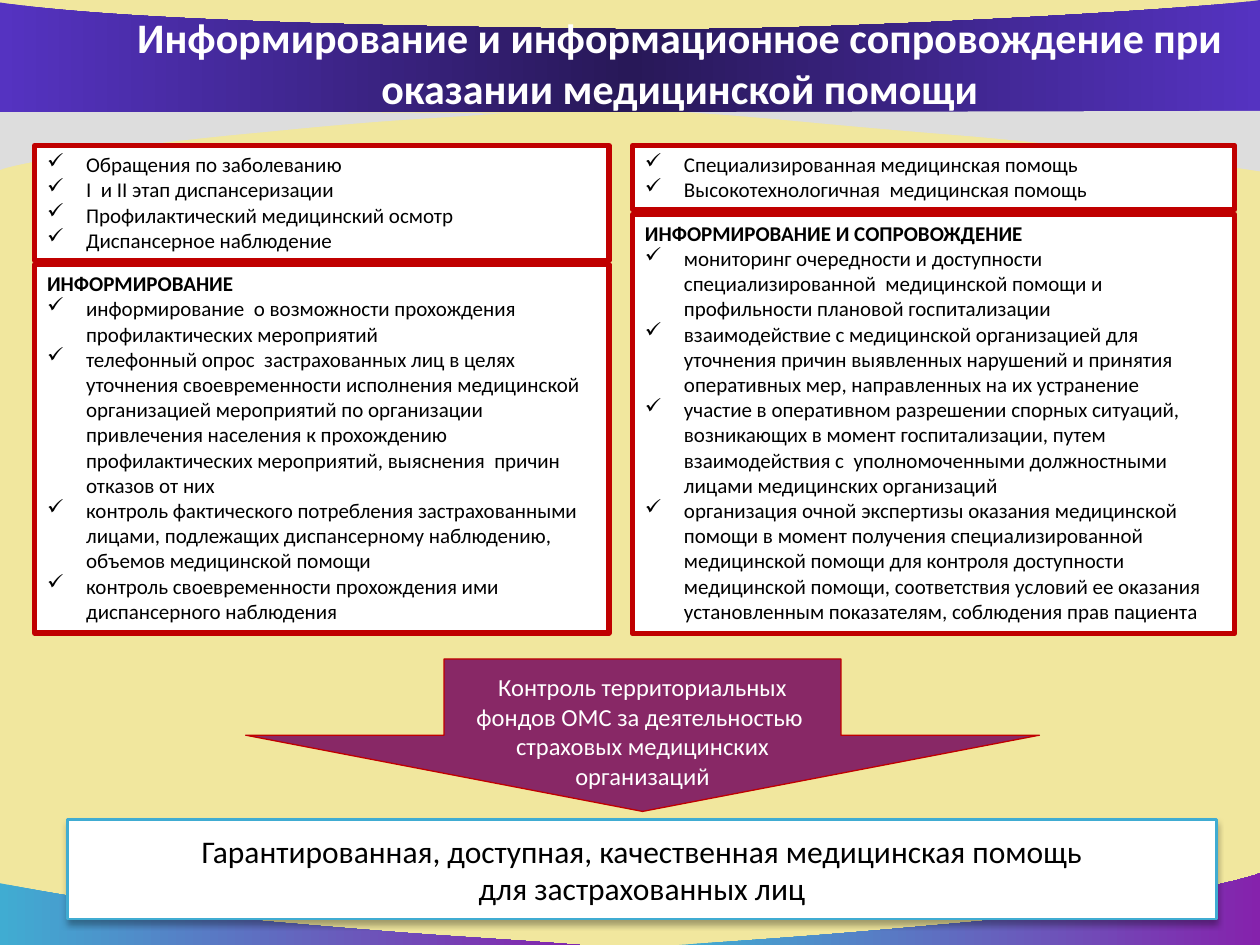
from dataclasses import dataclass
from lxml.etree import SubElement
from pptx import Presentation
from pptx.dml.color import RGBColor as Rgb
from pptx.enum.shapes import MSO_SHAPE as Preset
from pptx.enum.text import MSO_ANCHOR as Anchor, PP_ALIGN as Align
from pptx.oxml.ns import qn
from pptx.util import Inches, Pt

COLUMNS, ROWS = 100, 75
WIDTH, HEIGHT = Inches(10), Inches(7.5)


@dataclass(frozen=True)
class Theme:
    font: str = "Calibri"
    title: int = 24
    body: int = 12
    control: int = 14
    outcome: int = 18
    sand: str = "F1E79E"
    white: str = "FFFFFF"
    black: str = "000000"
    gray: str = "DDDDDD"
    red: str = "C00000"
    plum: str = "882866"
    sky: str = "40ACD2"
    corner: tuple = ((0, "40ACD2"), (100, "8522AC"))
    banner: tuple = ((0, "5533C1"), (50, "281858"), (100, "5533C1"))


@dataclass(frozen=True)
class Box:
    left: float
    top: float
    width: float
    height: float

    def emu(self):
        return (col(self.left), row(self.top), col(self.width), row(self.height))

    def split(self, first, gap):
        rest = self.height - first - gap
        return (Box(self.left, self.top, self.width, first),
                Box(self.left, self.top + first + gap, self.width, rest))


THEME = Theme()


def col(count):
    return int(WIDTH * count / COLUMNS)


def row(count):
    return int(HEIGHT * count / ROWS)


def node(parent, tag, **attributes):
    return SubElement(parent, qn(tag), attributes)


def fill_gradient(shape, stops):
    shape.fill.gradient()
    shape.fill.gradient_angle = 0
    stop_list = shape.fill._fill._gradFill.find(qn("a:gsLst"))
    for stop in list(stop_list):
        stop_list.remove(stop)
    for position, color in stops:
        stop = node(stop_list, "a:gs", pos=str(position * 1000))
        node(stop, "a:srgbClr", val=color)


def paint(shape, fill, line=None, weight=0):
    shape.shadow.inherit = False
    if isinstance(fill, tuple):
        fill_gradient(shape, fill)
    else:
        shape.fill.solid()
        shape.fill.fore_color.rgb = Rgb.from_string(fill)
    if line:
        shape.line.color.rgb = Rgb.from_string(line)
        shape.line.width = Pt(weight)
    else:
        shape.line.fill.background()


def style(paragraph, size, color, align=Align.LEFT, bold=False):
    paragraph.alignment = align
    for part in (paragraph, *paragraph.runs):
        font = part.font
        font.name, font.size, font.bold = THEME.font, Pt(size), bold
        font.color.rgb = Rgb.from_string(color)


def add_check(paragraph):
    properties = paragraph._p.get_or_add_pPr()
    indent = Inches(0.31)
    properties.set("marL", str(indent))
    properties.set("indent", str(-indent))
    node(properties, "a:buChar", char="✓")


def add_wave(slide, start, curves, corners, fill):
    anchors = [start] + [curve[-1] for curve in curves] + corners
    outline = [(col(x), row(y)) for x, y in anchors]
    builder = slide.shapes.build_freeform(*outline[0], scale=1.0)
    builder.add_line_segments(outline[1:], close=True)
    wave = builder.convert_to_shape()
    segments = list(wave._element.iter(qn("a:lnTo")))
    for segment, curve in zip(segments, curves):
        segment.tag
        bend = node(segment.getparent(), "a:cubicBezTo")
        for x, y in curve:
            node(bend, "a:pt", x=str(col(x) - wave.left), y=str(row(y) - wave.top))
        segment.getparent().replace(segment, bend)
    paint(wave, fill)


def add_backdrop(slide):
    slide.background.fill.solid()
    slide.background.fill.fore_color.rgb = Rgb.from_string(THEME.sand)
    add_wave(slide, (46, 75), [((38.4, 74.4), (35.8, 74.4), (23.2, 73.3)),
                               ((10.6, 72.3), (0.1, 70.1), (0, 70.1))], [(0, 75)], THEME.corner)
    add_wave(slide, (53.9, 75), [((61.4, 74.5), (64.6, 74.3), (76.9, 73.2)),
                                 ((89.2, 72.1), (99, 69.8), (100, 69.3))], [(100, 75)], THEME.corner)
    add_wave(slide, (39.8, 9), [((33.1, 9.5), (31.8, 9.4), (20.8, 10.5)),
                                ((9.7, 11.5), (0.9, 13), (0, 13.5))], [(0, 8.7)], THEME.gray)
    add_wave(slide, (100, 0), [((96.4, 0.6), (65.3, 2.6), (48.7, 2.3)),
                               ((32.1, 2.1), (10.1, 1.7), (0, 0.2))], [(0, 8.9), (100, 8.9)], THEME.banner)
    add_wave(slide, (54.4, 8.9), [((62, 9.4), (64.2, 9.8), (76.8, 10.8)),
                                  ((89.4, 11.9), (99.9, 13.6), (100, 13.6))], [(100, 8.8)], THEME.gray)


def add_title(slide, box, wording):
    title = slide.shapes.title
    title.left, title.top, title.width, title.height = box.emu()
    frame = title.text_frame
    frame.text = wording
    frame.word_wrap = True
    frame.vertical_anchor = Anchor.TOP
    style(frame.paragraphs[0], THEME.title, THEME.white, Align.CENTER, True)
    slide.shapes._spTree.append(title._element)


def add_panel(slide, box, items, heading=None):
    panel = slide.shapes.add_shape(Preset.RECTANGLE, *box.emu())
    paint(panel, THEME.white, THEME.red, 3)
    frame = panel.text_frame
    frame.word_wrap = True
    frame.vertical_anchor = Anchor.TOP
    frame.text = "\n".join(([heading] if heading else []) + items)
    for index, paragraph in enumerate(frame.paragraphs):
        is_heading = bool(heading) and index == 0
        if not is_heading:
            add_check(paragraph)
        style(paragraph, THEME.body, THEME.black, bold=is_heading)


def add_care_column(slide, box, split_at, care, heading, duties):
    care_box, duties_box = box.split(split_at, 0.35)
    add_panel(slide, care_box, care)
    add_panel(slide, duties_box, duties, heading)


def add_centered(slide, preset, box, lines, size, colors, weight):
    fill, line, ink = colors
    shape = slide.shapes.add_shape(preset, *box.emu())
    paint(shape, fill, line, weight)
    frame = shape.text_frame
    frame.word_wrap = True
    frame.vertical_anchor = Anchor.MIDDLE
    frame.text = "\n".join(lines)
    for paragraph in frame.paragraphs:
        style(paragraph, size, ink, Align.CENTER)
    return shape


def add_control_arrow(slide, box, lines):
    arrow = add_centered(slide, Preset.DOWN_ARROW, box, lines, THEME.control,
                         (THEME.plum, THEME.red, THEME.white), 0.75)
    arrow.text_frame.margin_top = row(2.9)


def add_outcome(slide, box, lines):
    outcome = add_centered(slide, Preset.RECTANGLE, box, lines, THEME.outcome,
                           (THEME.white, THEME.sky, THEME.black), 1.5)
    effects = outcome._element.spPr.find(qn("a:effectLst"))
    shadow = node(effects, "a:outerShdw", blurRad=str(Pt(3.5)), dist=str(Pt(2.2)),
                  dir="5400000", rotWithShape="0")
    node(node(shadow, "a:srgbClr", val=THEME.black), "a:alpha", val="32000")


def main():
    deck = Presentation()
    deck.slide_width, deck.slide_height = WIDTH, HEIGHT
    slide = deck.slides.add_slide(deck.slide_layouts[5])
    add_backdrop(slide)
    add_care_column(
        slide, Box(2.75, 11.55, 45.6, 38.7), 9.1,
        ["Обращения по заболеванию", "I  и II этап диспансеризации",
         "Профилактический медицинский осмотр", "Диспансерное наблюдение"],
        "ИНФОРМИРОВАНИЕ",
        ["информирование  о возможности прохождения профилактических мероприятий",
         "телефонный опрос  застрахованных лиц в целях уточнения своевременности исполнения медицинской организацией мероприятий по организации привлечения населения к прохождению профилактических мероприятий, выяснения  причин отказов от них",
         "контроль фактического потребления застрахованными лицами, подлежащих диспансерному наблюдению, объемов медицинской помощи",
         "контроль своевременности прохождения ими диспансерного наблюдения"])
    add_care_column(
        slide, Box(50.2, 11.55, 47.8, 38.75), 5.1,
        ["Специализированная медицинская помощь", "Высокотехнологичная  медицинская помощь"],
        "ИНФОРМИРОВАНИЕ И СОПРОВОЖДЕНИЕ",
        ["мониторинг очередности и доступности специализированной  медицинской помощи и профильности плановой госпитализации",
         "взаимодействие с медицинской организацией для уточнения причин выявленных нарушений и принятия оперативных мер, направленных на их устранение",
         "участие в оперативном разрешении спорных ситуаций, возникающих в момент госпитализации, путем взаимодействия с  уполномоченными должностными  лицами медицинских организаций",
         "организация очной экспертизы оказания медицинской помощи в момент получения специализированной медицинской помощи для контроля доступности медицинской помощи, соответствия условий ее оказания установленным показателям, соблюдения прав пациента"])
    add_control_arrow(slide, Box(19.5, 52.3, 63, 12.1),
                      ["Контроль территориальных фондов ОМС за деятельностью ",
                       "страховых медицинских организаций"])
    add_outcome(slide, Box(5.35, 65.05, 91.2, 7.9),
                ["Гарантированная, доступная, качественная медицинская помощь", "для застрахованных лиц"])
    add_title(slide, Box(6.7, 0.45, 94.5, 9.1),
              "Информирование и информационное сопровождение при оказании медицинской помощи")
    deck.save("out.pptx")


if __name__ == "__main__":
    main()
